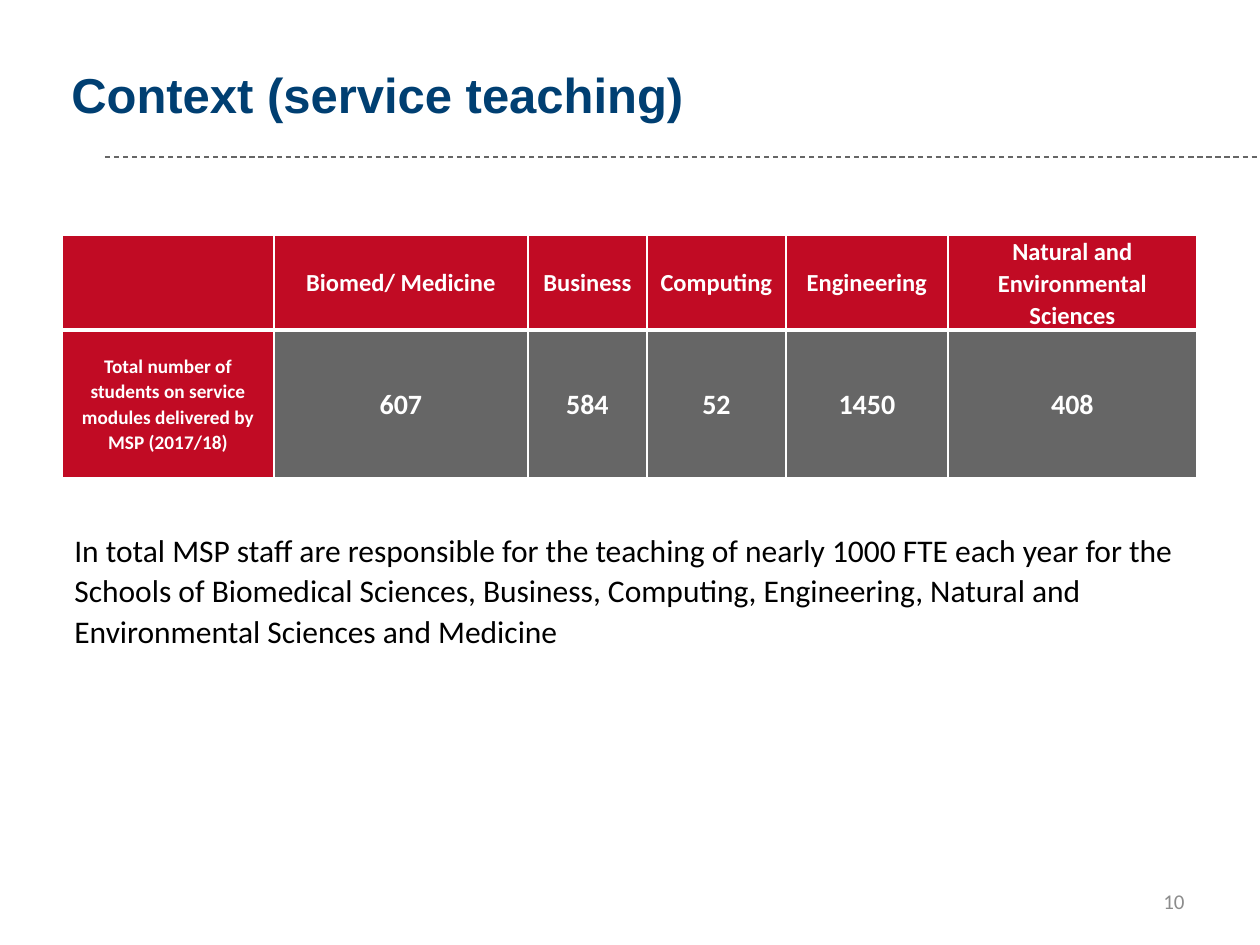
from lxml import etree
from pptx import Presentation
from pptx.dml.color import RGBColor
from pptx.enum.dml import MSO_LINE
from pptx.enum.shapes import MSO_CONNECTOR
from pptx.enum.text import MSO_ANCHOR, MSO_AUTO_SIZE, PP_ALIGN
from pptx.oxml.ns import qn
from pptx.util import Emu, Pt

SCALE = 914400 / 126
RED, GREY, WHITE, NAVY = "C10B24", "666666", "FFFFFF", "003F72"
SCHOOLS = ["Biomed/ Medicine", "Business", "Computing", "Engineering",
           "Natural and Environmental Sciences"]
STUDENTS = ["607", "584", "52", "1450", "408"]
ROW_LABEL = "Total number of students on service modules delivered by MSP (2017/18)"
SUMMARY = ("In total MSP staff are responsible for the teaching of nearly 1000 FTE "
           "each year for the Schools of Biomedical Sciences, Business, Computing, "
           "Engineering, Natural and Environmental Sciences and Medicine")
COLUMN_WIDTHS = [212, 254, 119, 139, 162, 249]
ROW_HEIGHTS = [95, 148]


def px(length):
    """Turn pixels into EMU."""
    return Emu(round(length * SCALE))


def color(value):
    """Turn a hex string into a colour."""
    return RGBColor.from_string(value)


def write(frame, text, size, ink, font="Calibri", bold=False, align=PP_ALIGN.LEFT, spacing=None):
    """Write one styled paragraph into a text frame."""
    frame.word_wrap = True
    paragraph = frame.paragraphs[0]
    paragraph.text = text
    paragraph.alignment = align
    paragraph.line_spacing = spacing
    paragraph.font.name = font
    paragraph.font.size = Pt(size)
    paragraph.font.bold = bold
    paragraph.font.color.rgb = color(ink)


def add_text(slide, box, text, size, ink, anchor=MSO_ANCHOR.MIDDLE, **style):
    """Place a text box and return its frame."""
    frame = slide.shapes.add_textbox(*map(px, box)).text_frame
    frame.vertical_anchor = anchor
    write(frame, text, size, ink, **style)
    return frame


def add_rule(slide, left, top, width):
    """Draw the dashed rule below the title."""
    rule = slide.shapes.add_connector(
        MSO_CONNECTOR.STRAIGHT, px(left), px(top), px(left + width), px(top))
    rule.line.color.rgb = color(GREY)
    rule.line.width = Pt(0.75)
    rule.line.dash_style = MSO_LINE.DASH
    etree.SubElement(rule._element.spPr, qn("a:effectLst"))


def add_borders(cell, bottom):
    """Give a cell white borders, with its own bottom weight."""
    properties = cell._tc.get_or_add_tcPr()
    for side, weight in zip("LRTB", (1, 1, 1, bottom)):
        border = etree.SubElement(properties, qn(f"a:ln{side}"), w=str(Pt(weight)))
        fill = etree.SubElement(border, qn("a:solidFill"))
        etree.SubElement(fill, qn("a:srgbClr"), val=WHITE)


def style_cell(cell, text, size, fill, bottom):
    """Fill, border and label one table cell."""
    add_borders(cell, bottom)
    cell.fill.solid()
    cell.fill.fore_color.rgb = color(fill)
    cell.vertical_anchor = MSO_ANCHOR.MIDDLE
    cell.margin_left = cell.margin_right = px(9)
    cell.margin_top = cell.margin_bottom = 0
    write(cell.text_frame, text, size, WHITE, bold=True, align=PP_ALIGN.CENTER, spacing=1.07)


def add_student_table(slide, left, top):
    """Build the table of student numbers by school."""
    table = slide.shapes.add_table(
        len(ROW_HEIGHTS), len(COLUMN_WIDTHS), px(left), px(top),
        px(sum(COLUMN_WIDTHS)), px(sum(ROW_HEIGHTS))).table
    for column, width in zip(table.columns, COLUMN_WIDTHS):
        column.width = px(width)
    for row, height in zip(table.rows, ROW_HEIGHTS):
        row.height = px(height)
    for index, school in enumerate([""] + SCHOOLS):
        style_cell(table.cell(0, index), school, 14, RED, 3)
    style_cell(table.cell(1, 0), ROW_LABEL, 11, RED, 1)
    for index, count in enumerate(STUDENTS, 1):
        style_cell(table.cell(1, index), count, 16, GREY, 1)


def build_slide(slide):
    """Place every region of the slide."""
    add_rule(slide, 105, 157, 1155)
    add_text(slide, (903, 876, 294, 50), "10", 12, "8C8C8C", align=PP_ALIGN.RIGHT)
    add_text(slide, (59, 55, 1201, 77), "Context (service teaching)", 28, NAVY,
             font="Arial", bold=True)
    add_student_table(slide, 62, 235)
    summary = add_text(slide, (62, 522, 1135, 135), SUMMARY, 18, "000000",
                       anchor=MSO_ANCHOR.TOP, spacing=1.07)
    summary.auto_size = MSO_AUTO_SIZE.SHAPE_TO_FIT_TEXT


def main():
    """Build and save the presentation."""
    deck = Presentation()
    deck.slide_width, deck.slide_height = px(1260), px(945)
    build_slide(deck.slides.add_slide(deck.slide_layouts[6]))
    deck.save("out.pptx")


if __name__ == "__main__":
    main()
